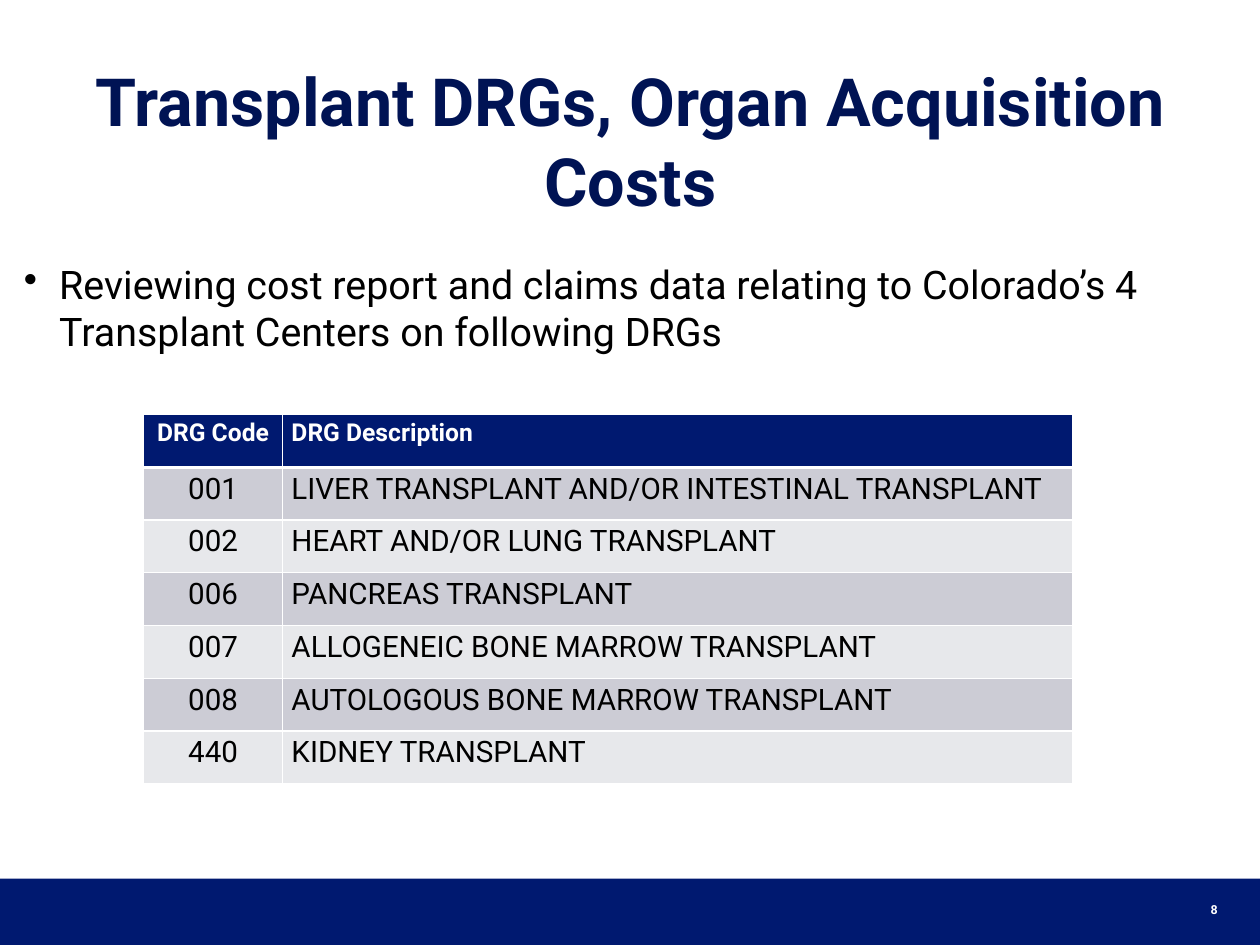
import dataclasses

import lxml.etree
import pptx
import pptx.dml.color
import pptx.enum.shapes
import pptx.enum.text
import pptx.oxml.ns
import pptx.util

EMU_PER_PX = 9144
FONT = "Roboto"
NAVY = pptx.dml.color.RGBColor(0x00, 0x19, 0x70)
TITLE_NAVY = pptx.dml.color.RGBColor(0x00, 0x13, 0x54)
BLACK = pptx.dml.color.RGBColor(0x00, 0x00, 0x00)
WHITE = pptx.dml.color.RGBColor(0xFF, 0xFF, 0xFF)
ROW_FILLS = (
    pptx.dml.color.RGBColor(0xCC, 0xCC, 0xD5),
    pptx.dml.color.RGBColor(0xE7, 0xE8, 0xEB),
)
ALIGN = pptx.enum.text.PP_ALIGN
ANCHOR = pptx.enum.text.MSO_ANCHOR


@dataclasses.dataclass(frozen=True)
class Box:
    left: int
    top: int
    width: int
    height: int

    def emu(self) -> list[int]:
        return [px(side) for side in dataclasses.astuple(self)]


@dataclasses.dataclass(frozen=True)
class Style:
    size: float
    color: pptx.dml.color.RGBColor
    bold: bool = False


@dataclasses.dataclass(frozen=True)
class DrgRow:
    code: str
    description: str


PAGE = Box(0, 0, 1422, 1067)
FOOTER_BAND = Box(0, 992, 1422, 75)
TITLE = Box(98, 68, 1227, 221)
BODY = Box(17, 289, 1338, 618)
TABLE = Box(162, 468, 1048, 417)
PAGE_NUMBER = Box(1149, 999, 235, 57)
COLUMN_WIDTHS = (157, 891)
BULLET_INDENT = 40
THIN, THICK = 1, 3

HEADER_STYLE = Style(20, WHITE, True)
ROW_STYLE = Style(24, BLACK)
HEADER = DrgRow("DRG Code", "DRG Description")
DRG_ROWS = (
    DrgRow("001", "LIVER TRANSPLANT AND/OR INTESTINAL TRANSPLANT"),
    DrgRow("002", "HEART AND/OR LUNG TRANSPLANT"),
    DrgRow("006", "PANCREAS TRANSPLANT"),
    DrgRow("007", "ALLOGENEIC BONE MARROW TRANSPLANT"),
    DrgRow("008", "AUTOLOGOUS BONE MARROW TRANSPLANT"),
    DrgRow("440", "KIDNEY TRANSPLANT"),
)


def px(length: int) -> pptx.util.Emu:
    return pptx.util.Emu(length * EMU_PER_PX)


def write(frame, text: str, style: Style, align: ALIGN, bulleted: bool = False) -> None:
    para = frame.paragraphs[0]
    para.text = text
    para.alignment = align
    if bulleted:
        add_bullet(para)
    para.font.name = FONT
    para.font.size = pptx.util.Pt(style.size)
    para.font.bold = style.bold
    para.font.color.rgb = style.color


def add_bullet(para) -> None:
    properties = para._p.get_or_add_pPr()
    properties.set("marL", str(px(BULLET_INDENT)))
    properties.set("indent", str(-px(BULLET_INDENT)))
    bullet = lxml.etree.SubElement(properties, pptx.oxml.ns.qn("a:buChar"))
    bullet.set("char", "•")


def add_text(page, box: Box, text: str, style: Style, align: ALIGN,
             anchor: ANCHOR, bulleted: bool = False) -> None:
    frame = page.shapes.add_textbox(*box.emu()).text_frame
    frame.word_wrap = True
    frame.vertical_anchor = anchor
    write(frame, text, style, align, bulleted)


def place_title(page, text: str) -> None:
    title = page.shapes.title
    title.left, title.top, title.width, title.height = TITLE.emu()
    frame = title.text_frame
    frame.auto_size = pptx.enum.text.MSO_AUTO_SIZE.NONE
    frame.word_wrap = True
    frame.vertical_anchor = ANCHOR.TOP
    frame.margin_left = frame.margin_right = 0
    frame.margin_top = frame.margin_bottom = 0
    write(frame, text, Style(54, TITLE_NAVY, True), ALIGN.CENTER)


def add_footer_band(page) -> None:
    band = page.shapes.add_shape(
        pptx.enum.shapes.MSO_SHAPE.RECTANGLE, *FOOTER_BAND.emu())
    band.shadow.inherit = False
    band.fill.solid()
    band.fill.fore_color.rgb = NAVY
    band.line.fill.background()


def add_borders(cell, top: int, bottom: int) -> None:
    properties = cell._tc.get_or_add_tcPr()
    widths = {"a:lnL": THIN, "a:lnR": THIN, "a:lnT": top, "a:lnB": bottom}
    for tag, width in widths.items():
        line = lxml.etree.SubElement(properties, pptx.oxml.ns.qn(tag))
        line.set("w", str(pptx.util.Pt(width)))
        fill = lxml.etree.SubElement(line, pptx.oxml.ns.qn("a:solidFill"))
        color = lxml.etree.SubElement(fill, pptx.oxml.ns.qn("a:srgbClr"))
        color.set("val", str(WHITE))


def add_drg_table(page) -> None:
    rows = (HEADER, *DRG_ROWS)
    table = page.shapes.add_table(
        len(rows), len(COLUMN_WIDTHS), *TABLE.emu()).table
    for column, width in zip(table.columns, COLUMN_WIDTHS):
        column.width = px(width)
    for index, row in enumerate(rows):
        is_header = index == 0
        style = HEADER_STYLE if is_header else ROW_STYLE
        fill = NAVY if is_header else ROW_FILLS[(index - 1) % 2]
        top = THICK if index == 1 else THIN
        bottom = THICK if is_header else THIN
        texts = ((row.code, ALIGN.CENTER), (row.description, ALIGN.LEFT))
        for column_index, (text, align) in enumerate(texts):
            cell = table.cell(index, column_index)
            add_borders(cell, top, bottom)
            cell.fill.solid()
            cell.fill.fore_color.rgb = fill
            write(cell.text_frame, text, style, align)


def main() -> None:
    deck = pptx.Presentation()
    deck.slide_width, deck.slide_height = px(PAGE.width), px(PAGE.height)
    page = deck.slides.add_slide(deck.slide_layouts.get_by_name("Title Only"))
    add_footer_band(page)
    place_title(page, "Transplant DRGs, Organ Acquisition Costs")
    add_text(
        page, BODY,
        "Reviewing cost report and claims data relating to Colorado’s 4 "
        "Transplant Centers on following DRGs",
        Style(32, BLACK), ALIGN.LEFT, ANCHOR.TOP, bulleted=True)
    add_drg_table(page)
    add_text(page, PAGE_NUMBER, "8", Style(10.1, WHITE, True),
             ALIGN.RIGHT, ANCHOR.MIDDLE)
    deck.save("out.pptx")


if __name__ == "__main__":
    main()
